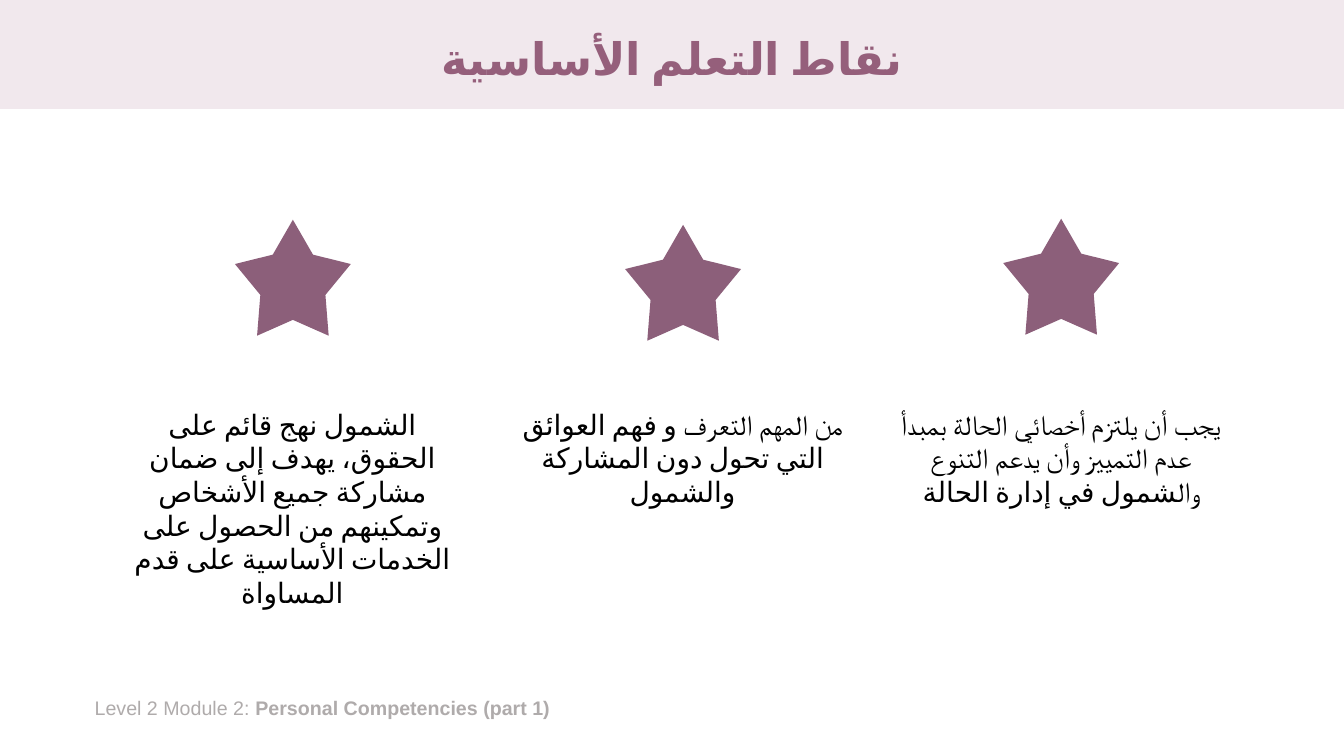
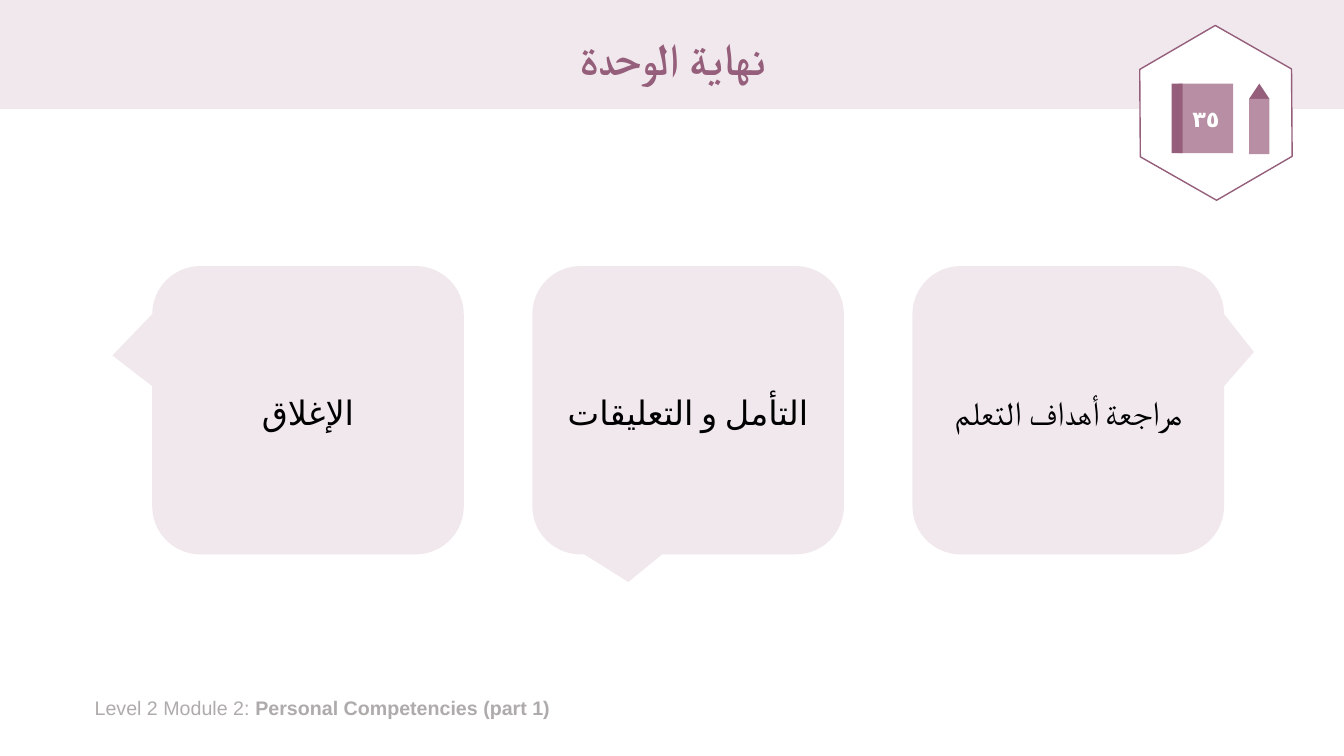
"""Build the key learning points and module closing slides."""
from lxml import etree
from pptx import Presentation
from pptx.dml.color import RGBColor
from pptx.enum.shapes import MSO_SHAPE
from pptx.enum.text import MSO_ANCHOR, PP_ALIGN
from pptx.oxml.ns import qn
from pptx.util import Inches, Pt

PLUM = RGBColor(0x95, 0x5F, 0x7B)
STAR_PLUM = RGBColor(0x8C, 0x5F, 0x7A)
MAUVE = RGBColor(0xB7, 0x8E, 0xA3)
PALE = RGBColor(0xF1, 0xE8, 0xED)
GREY = RGBColor(0xAF, 0xAB, 0xAB)
WHITE = RGBColor(0xFF, 0xFF, 0xFF)
BLACK = RGBColor(0x00, 0x00, 0x00)
CENTER = PP_ALIGN.CENTER
TOP = MSO_ANCHOR.TOP
MIDDLE = MSO_ANCHOR.MIDDLE
RECTANGLE = MSO_SHAPE.RECTANGLE
STAR = MSO_SHAPE.STAR_5_POINT
CALLOUT = MSO_SHAPE.ROUNDED_RECTANGULAR_CALLOUT
HEXAGON = MSO_SHAPE.HEXAGON
TRIANGLE = MSO_SHAPE.ISOSCELES_TRIANGLE
ARABIC = "ar-SA"
ENGLISH = "en-US"


def write(frame, *pieces, size, color, font="Calibri", bold=False, rtl=True,
          line_spacing=1.0, space_after=0, anchor=MIDDLE):
    """Fill a text frame with one paragraph of (text, language) pieces."""
    frame.word_wrap = True
    frame.vertical_anchor = anchor
    paragraph = frame.paragraphs[0]
    paragraph.line_spacing = line_spacing
    paragraph.space_after = Pt(space_after)
    if rtl:
        paragraph.alignment = CENTER
        paragraph._p.get_or_add_pPr().set("rtl", "1")
    for text, language in pieces:
        run = paragraph.add_run()
        run.text = text
        run.font.name = font
        run.font.size = Pt(size)
        run.font.bold = bold
        run.font.color.rgb = color
        properties = run._r.get_or_add_rPr()
        properties.set("lang", language)
        etree.SubElement(properties, qn("a:cs")).set("typeface", font)
    return paragraph


def add_block(shapes, kind, box, fill, adjustments=()):
    """Add a flat preset shape without outline or shadow."""
    shape = shapes.add_shape(kind, *map(Inches, box))
    shape.shadow.inherit = False
    shape.fill.solid()
    shape.fill.fore_color.rgb = fill
    shape.line.fill.background()
    for index, value in enumerate(adjustments):
        shape.adjustments[index] = value
    return shape


presentation = Presentation()
presentation.slide_width = Inches(13.33)
presentation.slide_height = Inches(7.5)
layout = presentation.slide_layouts[5]
for placeholder in list(layout.placeholders):
    if placeholder.placeholder_format.idx:
        placeholder.element.getparent().remove(placeholder.element)
layout_title = layout.placeholders[0]
layout_title.left, layout_title.top = Inches(0.92), Inches(0.13)
layout_title.width, layout_title.height = Inches(11.5), Inches(0.95)

points_slide = presentation.slides.add_slide(layout)
closing_slide = presentation.slides.add_slide(layout)

band = add_block(points_slide.shapes, RECTANGLE, (0, 0, 13.33, 1.08), PALE)
footer = points_slide.shapes.add_textbox(
    Inches(0.84), Inches(6.86), Inches(11.35), Inches(0.34))
footer_line = write(
    footer.text_frame, ("Level 2 Module 2: ", ENGLISH),
    ("Personal Competencies (part 1)", ENGLISH),
    size=14, color=GREY, font="Arial", rtl=False, anchor=TOP)
footer_line.runs[1].font.bold = True
for position, shared in enumerate((band, footer), start=2):
    layout.shapes.element.insert(position, shared.element)

titles = [
    (points_slide, "نقاط التعلم الأساسية", ARABIC),
    (closing_slide, "نهاية الوحدة", ENGLISH),
]
for slide, text, language in titles:
    write(slide.shapes.title.text_frame, (text, language),
          size=32, color=PLUM, bold=True, line_spacing=0.9)

learning_points = [
    (1.16, 1.78, 2.33, 2.18, [
        ("الشمول نهج قائم على الحقوق، يهدف إلى ضمان مشاركة جميع الأشخاص "
         "وتمكينهم من الحصول على الخدمات الأساسية على قدم المساواة", ARABIC)]),
    (5.03, 0.77, 6.2, 2.23, [
        ("من المهم التعرف", ENGLISH),
        (" و فهم العوائق التي تحول دون المشاركة والشمول", ARABIC)]),
    (8.78, 1.11, 9.95, 2.17, [
        ("يجب أن يلتزم أخصائي الحالة بمبدأ عدم التمييز وأن يدعم التنوع وال", ENGLISH),
        ("شمول في إدارة الحالة", ARABIC)]),
]
for left, height, star_left, star_top, pieces in learning_points:
    add_block(points_slide.shapes, STAR, (star_left, star_top, 1.15, 1.15),
              STAR_PLUM, (0.281, 1.051, 1.106))
    text_box = points_slide.shapes.add_textbox(
        Inches(left), Inches(3.99), Inches(3.48), Inches(height))
    write(text_box.text_frame, *pieces, size=20, color=BLACK, anchor=TOP)

closing_steps = [
    ("الإغلاق", ARABIC, (-0.628, -0.19, 0.167)),
    ("التأمل و التعليقات", ARABIC, (-0.192, 0.596, 0.167)),
    ("مراجعة أهداف التعلم", ENGLISH, (0.596, -0.202, 0.167)),
]
for index, (text, language, pointer) in enumerate(closing_steps):
    callout = add_block(closing_slide.shapes, CALLOUT,
                        (1.51 + 3.77 * index, 2.64, 3.09, 2.86), PALE, pointer)
    write(callout.text_frame, (text, language), size=24, color=BLACK,
          line_spacing=1.07, space_after=8)

badge = closing_slide.shapes.add_group_shape().shapes
frame_hexagon = add_block(badge, HEXAGON, (11.19, 0.37, 1.74, 1.5), WHITE, (0.29, 1.155))
frame_hexagon.rotation = 29.7
frame_hexagon.line.color.rgb = PLUM
frame_hexagon.line.width = Pt(1)
book = add_block(badge, RECTANGLE, (11.69, 0.83, 0.54, 0.69), MAUVE)
write(book.text_frame, ("٣٥", ARABIC), size=16, color=WHITE, font="Arial", bold=True)
add_block(badge, RECTANGLE, (11.62, 0.83, 0.11, 0.69), PLUM)
add_block(badge, TRIANGLE, (12.39, 0.83, 0.2, 0.15), PLUM)
add_block(badge, RECTANGLE, (12.39, 0.98, 0.2, 0.55), MAUVE)

presentation.save("out.pptx")
